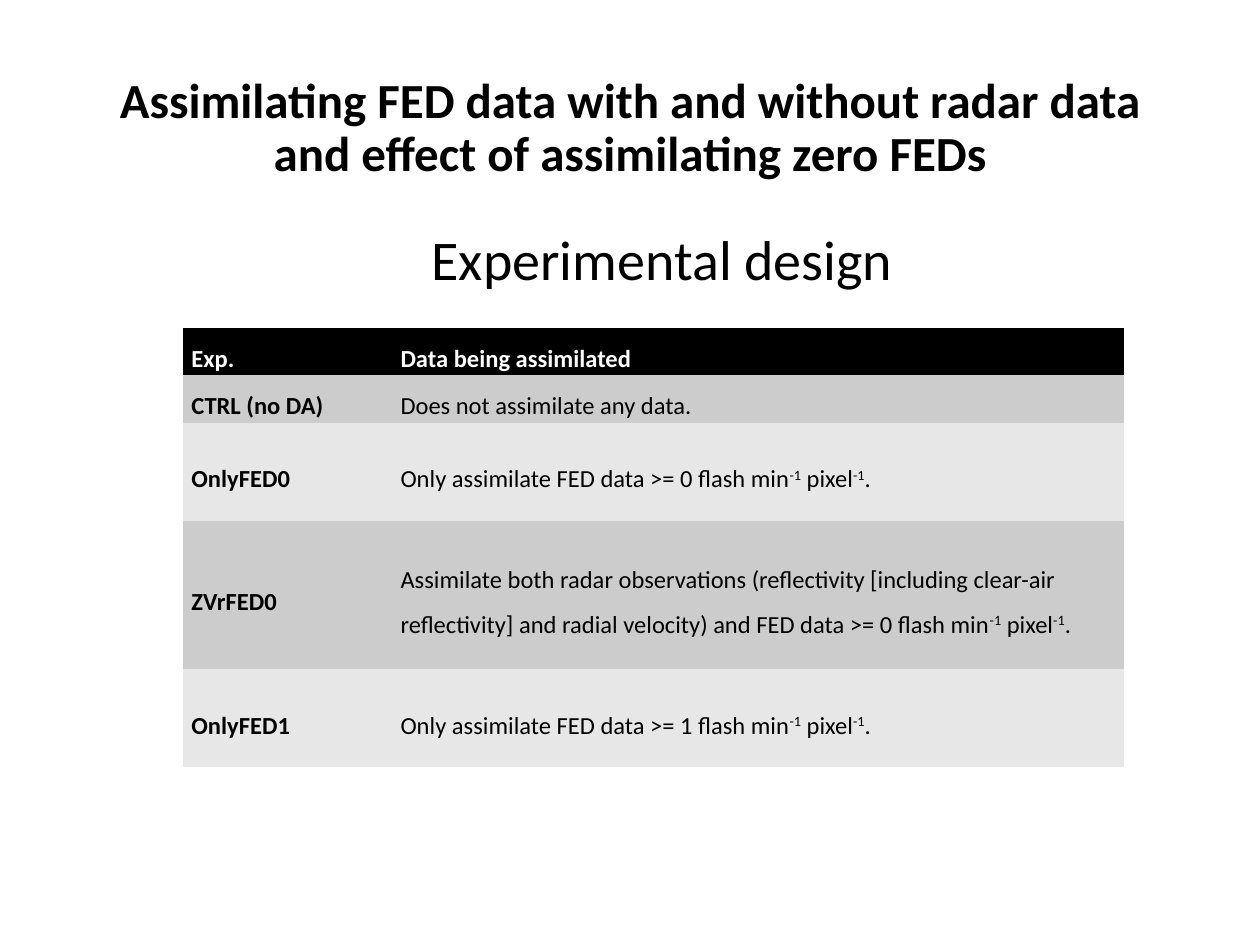
from pptx import Presentation
from pptx.dml.color import RGBColor
from pptx.enum.text import MSO_ANCHOR, PP_ALIGN
from pptx.util import Pt

BLACK, WHITE, DARK_BAND, LIGHT_BAND = "000000", "FFFFFF", "CCCCCC", "E7E7E7"
NO_STYLE = "{2D5ABB26-0587-4C30-8999-92F81FD0307C}"

# Carets enclose superscripts
ROWS = [
    ("Exp.", "Data being assimilated"),
    ("CTRL (no DA)", "Does not assimilate any data."),
    ("OnlyFED0", "Only assimilate FED data >= 0 flash min^-1^ pixel^-1^."),
    ("ZVrFED0", "Assimilate both radar observations (reflectivity [including "
                "clear-air reflectivity] and radial velocity) and FED data "
                ">= 0 flash min^-1^ pixel^-1^."),
    ("OnlyFED1", "Only assimilate FED data >= 1 flash min^-1^ pixel^-1^."),
]
COLUMN_WIDTHS = [119.5, 418.5]
ROW_HEIGHTS = [26.6, 27.4, 56, 85, 56]


def color(value):
    return RGBColor.from_string(value)


def set_values(target, values):
    for name, value in values.items():
        setattr(target, name, value)


class SlideBuilder:
    font_name = "Calibri"

    def __init__(self, slide):
        self.slide = slide

    def add_spans(self, para, text, size, bold=False, ink=BLACK):
        for index, part in enumerate(text.split("^")):
            span = para.add_run()
            span.text = part
            set_values(span.font, {"name": self.font_name, "size": Pt(size), "bold": bold})
            span.font.color.rgb = color(ink)
            if index % 2:
                span.font._element.set("baseline", "30000")

    def heading(self, text, left, top, width, height, size, bold=False):
        box = self.slide.shapes.add_textbox(Pt(left), Pt(top), Pt(width), Pt(height))
        set_values(box.text_frame, {"word_wrap": True, "vertical_anchor": MSO_ANCHOR.MIDDLE})
        para = box.text_frame.paragraphs[0]
        set_values(para, {"alignment": PP_ALIGN.CENTER, "line_spacing": 0.9})
        self.add_spans(para, text, size, bold)

    def table(self, rows, left, top, widths, heights, size):
        frame = self.slide.shapes.add_table(
            len(rows), len(widths), Pt(left), Pt(top), Pt(sum(widths)), Pt(sum(heights)))
        grid = frame.table
        grid._tbl.tblPr.find("{*}tableStyleId").text = NO_STYLE
        for column, width in zip(grid.columns, widths):
            column.width = Pt(width)
        for row_index, (row, texts) in enumerate(zip(grid.rows, rows)):
            row.height = Pt(heights[row_index])
            header = row_index == 0
            band = BLACK if header else DARK_BAND if row_index % 2 else LIGHT_BAND
            for column_index, (cell, text) in enumerate(zip(row.cells, texts)):
                set_values(cell, {
                    "margin_left": Pt(5), "margin_right": Pt(5),
                    "margin_top": Pt(0), "margin_bottom": Pt(0),
                    "vertical_anchor": MSO_ANCHOR.MIDDLE,
                })
                cell.fill.solid()
                cell.fill.fore_color.rgb = color(band)
                para = cell.text_frame.paragraphs[0]
                para.line_spacing = 1.5
                self.add_spans(para, text, size, bold=header or column_index == 0,
                               ink=WHITE if header else BLACK)


def main():
    deck = Presentation()
    set_values(deck, {"slide_width": Pt(720), "slide_height": Pt(540)})
    page = SlideBuilder(deck.slides.add_slide(deck.slide_layouts[6]))

    # Section heading
    page.heading("Experimental design", 174, 127.5, 409, 44.5, 32)

    # Experiment table
    page.table(ROWS, 104.4, 187.5, COLUMN_WIDTHS, ROW_HEIGHTS, 14)

    # Slide title
    page.heading("Assimilating FED data with and without radar data and effect "
                 "of assimilating zero FEDs", 49.5, 21.5, 621, 104.5, 28, bold=True)

    deck.save("out.pptx")


if __name__ == "__main__":
    main()
